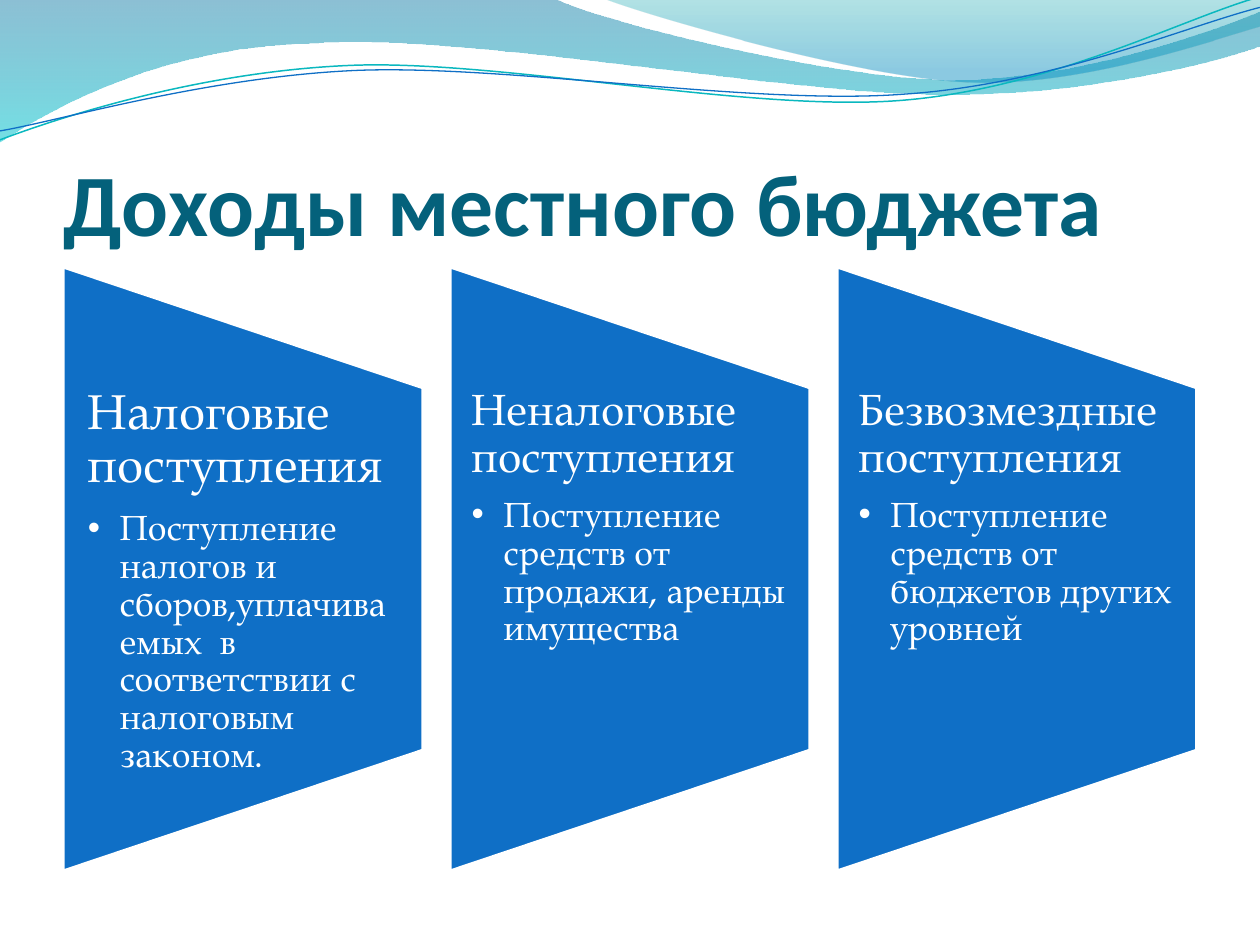
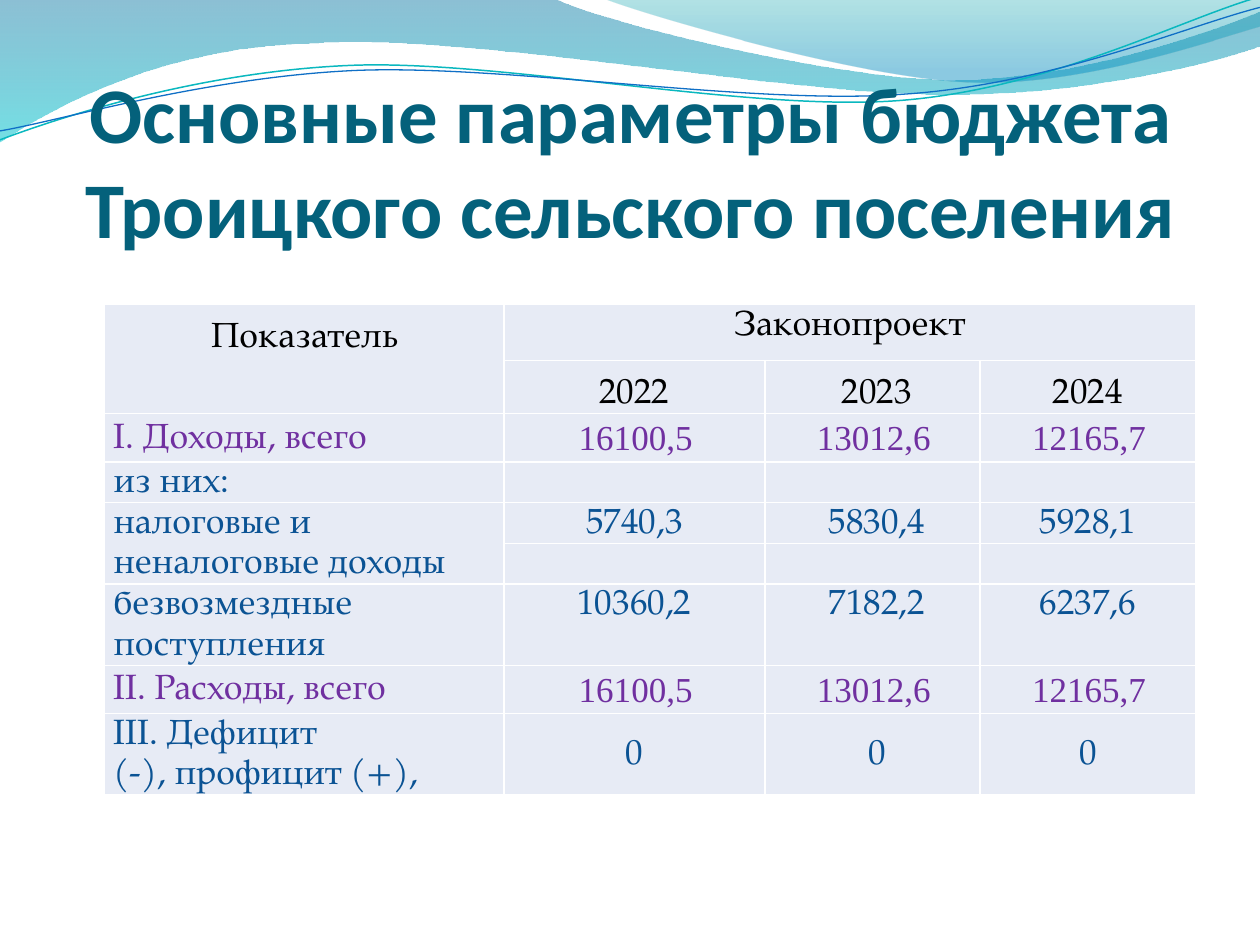
from dataclasses import dataclass
from typing import NamedTuple, Optional

from lxml import etree
from pptx import Presentation
from pptx.dml.color import RGBColor
from pptx.enum.shapes import MSO_SHAPE
from pptx.enum.text import MSO_ANCHOR, PP_ALIGN
from pptx.oxml.ns import qn
from pptx.util import Cm, Pt

TRAPEZOID = MSO_SHAPE.FLOWCHART_MANUAL_OPERATION
TOP, MIDDLE, BOTTOM = MSO_ANCHOR.TOP, MSO_ANCHOR.MIDDLE, MSO_ANCHOR.BOTTOM
LEFT, CENTER = PP_ALIGN.LEFT, PP_ALIGN.CENTER

WHITE = RGBColor(0xFF, 0xFF, 0xFF)
BLACK = RGBColor(0x00, 0x00, 0x00)
BLUE = RGBColor(0x0F, 0x6F, 0xC6)
TURQUOISE = RGBColor(0x0A, 0xB8, 0xBF)
TITLE_TEAL = RGBColor(0x04, 0x61, 0x7B)
CELL_FILL = RGBColor(0xE7, 0xEB, 0xF5)
TOTAL_PURPLE = RGBColor(0x70, 0x30, 0xA0)
DETAIL_BLUE = RGBColor(0x0B, 0x53, 0x94)

TITLE_FONT = "Calibri"
BODY_FONT = "TeX Gyre Pagella"
TOTAL_FONT = "Times New Roman"
CELL_LINE, HEADER_LINE = Pt(23.2), Pt(30.3)

Point = tuple[float, float]


class Stop(NamedTuple):
    position: float
    color: RGBColor
    opacity: int


@dataclass
class Wave:
    """Path in cm; a step holds one point (straight) or three (Bezier curve)."""
    start: Point
    steps: list[tuple[Point, ...]]
    stops: tuple[Stop, ...] = ()
    line: Optional[RGBColor] = None
    line_width: float = 0


WAVES = [
    Wave((0, 0), [
        ((11.18, -0.03),),
        ((12.09, 0.43), (16.87, 1.6), (19.25, 1.6)),
        ((21.67, 1.6), (24.33, 0.66), (25.4, 0.23)),
        ((25.43, 0.91),),
        ((24.97, 1.12), (22.1, 1.93), (18.95, 1.9)),
        ((15.8, 1.9), (9.7, 0.71), (6.53, 0.86)),
        ((3.28, 0.91), (1.17, 2.11), (-0.03, 2.87)),
    ], stops=(Stop(0, RGBColor(0x00, 0x74, 0xA1), 45),
              Stop(1, RGBColor(0x00, 0xC6, 0xCF), 55))),
    Wave((12.17, -0.03), [
        ((12.93, 0.28), (17.32, 1.57), (19.53, 1.65)),
        ((21.74, 1.75), (24.41, 0.81), (25.4, 0.53)),
        ((25.4, 0),),
    ], stops=(Stop(0, RGBColor(0x00, 0xA1, 0xA9), 30),
              Stop(0.8, RGBColor(0x00, 0x8B, 0xBF), 45))),
    Wave((0, 2.82), [
        ((1.22, 2.36), (4.01, 1.45), (7.04, 1.32)),
        ((10.03, 1.19), (15.06, 2.26), (18.11, 2.03)),
        ((21.16, 1.8), (23.83, 0.38), (25.35, -0.05)),
    ], line=TURQUOISE, line_width=0.85),
    Wave((0, 2.64), [
        ((1.19, 2.44), (4.17, 1.55), (7.19, 1.42)),
        ((10.24, 1.3), (15.16, 2.13), (18.21, 1.9)),
        ((21.23, 1.7), (23.9, 0.53), (25.4, 0.15)),
    ], line=BLUE, line_width=0.75),
]


@dataclass
class IncomeSource:
    heading: str
    detail: str
    heading_size: int = 25
    left_inset: float = 0.44


INCOME_SOURCES = [
    IncomeSource("Налоговые поступления",
                 "Поступление налогов и сборов,уплачиваемых  в соответствии "
                 "с налоговым законом.", heading_size=28, left_inset=0.5),
    IncomeSource("Неналоговые поступления",
                 "Поступление средств от продажи, аренды имущества"),
    IncomeSource("Безвозмездные поступления",
                 "Поступление средств от бюджетов других уровней"),
]
PANEL_LEFT, PANEL_STEP, PANEL_WIDTH = 1.27, 7.8, 7.26
PANEL_CENTER_Y, PANEL_HEIGHT = 11.47, 12.19
PANEL_TEXT_HEIGHT = 7.32


@dataclass
class BudgetRow:
    height: float
    label: str = ""
    values: tuple[str, ...] = ("", "", "")
    indents: tuple[float, ...] = (-0.18, 0.18, -0.18)
    color: RGBColor = DETAIL_BLUE
    value_font: str = BODY_FONT
    label_anchor: MSO_ANCHOR = TOP
    value_anchor: MSO_ANCHOR = TOP
    label_align: PP_ALIGN = LEFT
    label_indent: float = 0
    label_spacing: float = CELL_LINE
    value_spacing: float = CELL_LINE


def total_row(label: str) -> BudgetRow:
    return BudgetRow(0.9, label, ("16100,5", "13012,6", "12165,7"), (0.05,) * 3,
                     TOTAL_PURPLE, TOTAL_FONT, label_anchor=MIDDLE, value_spacing=1.15)


BUDGET_ROWS = [
    BudgetRow(1.13, "Показатель", ("Законопроект", "", ""), (0, 0, 0), BLACK,
              label_align=CENTER, label_indent=-0.18, label_spacing=HEADER_LINE),
    BudgetRow(1.07, values=("2022", "2023", "2024"), indents=(0, 0.18, 0),
              color=BLACK, value_spacing=HEADER_LINE),
    total_row("I. Доходы, всего"),
    BudgetRow(0.82, "из них:", label_anchor=MIDDLE),
    BudgetRow(0.82, "налоговые и неналоговые доходы", ("5740,3", "5830,4", "5928,1")),
    BudgetRow(0.82),
    BudgetRow(1.63, "безвозмездные поступления", ("10360,2", "7182,2", "6237,6")),
    total_row("II. Расходы, всего"),
    BudgetRow(1.62, "III. Дефицит\n(-), профицит (+),", ("0", "0", "0"),
              (0, 0.18, 0), value_anchor=MIDDLE),
]
COLUMN_WIDTHS = (8.05, 5.26, 4.34, 4.34)
MERGED_CELLS = [((0, 0), (1, 0)), ((0, 1), (0, 3)), ((4, 0), (5, 0))]


def write(frame, text: str, *, size: float, color: RGBColor, font: str = BODY_FONT,
          bold: bool = False, align: PP_ALIGN = LEFT, spacing: float = 1.0,
          after: float = 0, indent: float = 0, margin: float = 0,
          bullet: str = "") -> None:
    """Add one paragraph per line of text, starting in the first empty one."""
    for line in text.split("\n"):
        paragraph = frame.paragraphs[-1]
        if paragraph.runs:
            paragraph = frame.add_paragraph()
        paragraph.alignment = align
        paragraph.line_spacing = spacing
        paragraph.space_after = Pt(after)
        properties = paragraph._p.get_or_add_pPr()
        properties.set("marL", str(Cm(margin)))
        properties.set("indent", str(Cm(indent)))
        if bullet:
            etree.SubElement(properties, qn("a:buFont"), typeface="Arial")
            etree.SubElement(properties, qn("a:buChar"), char=bullet)
        run = paragraph.add_run()
        run.text = line
        run.font.name, run.font.size, run.font.bold = font, Pt(size), bold
        run.font.color.rgb = color


def add_text_frame(slide, left: float, top: float, width: float, height: float,
                   insets: tuple[float, ...], anchor: MSO_ANCHOR = TOP):
    """Add a wrapping text box; insets are left, top, right, bottom in cm."""
    frame = slide.shapes.add_textbox(Cm(left), Cm(top), Cm(width), Cm(height)).text_frame
    frame.word_wrap = True
    frame.vertical_anchor = anchor
    (frame.margin_left, frame.margin_top,
     frame.margin_right, frame.margin_bottom) = map(Cm, insets)
    return frame


def bend(shape, steps: list[tuple[Point, ...]]) -> None:
    """Join the straight segments of each three-point step into one Bezier curve."""
    segments = iter(list(shape._element.iter(qn("a:lnTo"))))
    for step in steps:
        first, *others = [next(segments) for _ in step]
        if others:
            curve = etree.Element(qn("a:cubicBezTo"))
            first.addprevious(curve)
            for segment in (first, *others):
                curve.append(segment[0])
                segment.getparent().remove(segment)


def add_wave(slide, wave: Wave) -> None:
    builder = slide.shapes.build_freeform(*map(Cm, wave.start))
    builder.add_line_segments([(Cm(x), Cm(y)) for step in wave.steps for x, y in step],
                              close=bool(wave.stops))
    shape = builder.convert_to_shape()
    bend(shape, wave.steps)
    shape.shadow.inherit = False
    if wave.line is not None:
        shape.fill.background()
        shape.line.color.rgb = wave.line
        shape.line.width = Pt(wave.line_width)
        return
    shape.line.fill.background()
    shape.fill.gradient()
    shape.fill.gradient_angle = 270
    for target, stop in zip(shape.fill.gradient_stops, wave.stops):
        target.position = stop.position
        target.color.rgb = stop.color
    for color, stop in zip(shape._element.spPr.iter(qn("a:srgbClr")), wave.stops):
        etree.SubElement(color, qn("a:alpha"), val=str(stop.opacity * 1000))


def add_titled_slide(deck, title: str, size: float, align: PP_ALIGN = LEFT):
    slide = deck.slides.add_slide(deck.slide_layouts[6])
    for wave in WAVES:
        add_wave(slide, wave)
    frame = add_text_frame(slide, 1.28, 1.94, 22.86, 3.18, (0, 0.13, 0, 0), BOTTOM)
    write(frame, title, size=size, color=TITLE_TEAL, font=TITLE_FONT, bold=True, align=align)
    return slide


def add_income_panel(slide, left: float, source: IncomeSource) -> None:
    panel = slide.shapes.add_shape(
        TRAPEZOID, Cm(left + (PANEL_WIDTH - PANEL_HEIGHT) / 2),
        Cm(PANEL_CENTER_Y - PANEL_WIDTH / 2), Cm(PANEL_HEIGHT), Cm(PANEL_WIDTH))
    panel.rotation = 270
    panel.shadow.inherit = False
    panel.fill.solid()
    panel.fill.fore_color.rgb = BLUE
    panel.line.color.rgb = WHITE
    panel.line.width = Pt(2)
    frame = add_text_frame(slide, left, PANEL_CENTER_Y - PANEL_TEXT_HEIGHT / 2, PANEL_WIDTH,
                           PANEL_TEXT_HEIGHT, (source.left_inset, 0, 0.46, 0))
    write(frame, source.heading, size=source.heading_size, color=WHITE, spacing=0.9,
          after=source.heading_size * 0.35)
    write(frame, source.detail, size=20, color=WHITE, spacing=0.9, after=3,
          margin=0.64, indent=-0.64, bullet="•")


def style_cell(cell, anchor: MSO_ANCHOR) -> None:
    cell.margin_left = cell.margin_right = Cm(0.18)
    cell.margin_top = cell.margin_bottom = 0
    cell.vertical_anchor = anchor
    for side in ("lnL", "lnR", "lnT", "lnB"):
        border = etree.SubElement(cell._tc.get_or_add_tcPr(), qn(f"a:{side}"), w=str(Pt(1)))
        fill = etree.SubElement(border, qn("a:solidFill"))
        etree.SubElement(fill, qn("a:srgbClr"), val=str(WHITE))
    cell.fill.solid()
    cell.fill.fore_color.rgb = CELL_FILL


def add_budget_table(slide) -> None:
    table = slide.shapes.add_table(
        len(BUDGET_ROWS), len(COLUMN_WIDTHS), Cm(2.11), Cm(6.14), Cm(sum(COLUMN_WIDTHS)),
        Cm(sum(row.height for row in BUDGET_ROWS))).table
    table.first_row = table.horz_banding = False
    for column, width in zip(table.columns, COLUMN_WIDTHS):
        column.width = Cm(width)
    for number, row in enumerate(BUDGET_ROWS):
        table.rows[number].height = Cm(row.height)
        label, *values = table.rows[number].cells
        style_cell(label, row.label_anchor)
        if row.label:
            write(label.text_frame, row.label, size=20, color=row.color, align=row.label_align,
                  spacing=row.label_spacing, indent=row.label_indent)
        for cell, value, indent in zip(values, row.values, row.indents):
            style_cell(cell, row.value_anchor)
            if value:
                write(cell.text_frame, value, size=20, color=row.color, font=row.value_font,
                      align=CENTER, spacing=row.value_spacing, indent=indent)
    for first, last in MERGED_CELLS:
        table.cell(*first).merge(table.cell(*last))


def main() -> None:
    deck = Presentation()
    deck.slide_width, deck.slide_height = Cm(25.4), Cm(19.05)
    income = add_titled_slide(deck, "Доходы местного бюджета", 50)
    for number, source in enumerate(INCOME_SOURCES):
        add_income_panel(income, PANEL_LEFT + number * PANEL_STEP, source)
    budget = add_titled_slide(
        deck, "Основные параметры бюджета Троицкого сельского поселения", 45, CENTER)
    add_budget_table(budget)
    deck.save("out.pptx")


if __name__ == "__main__":
    main()
